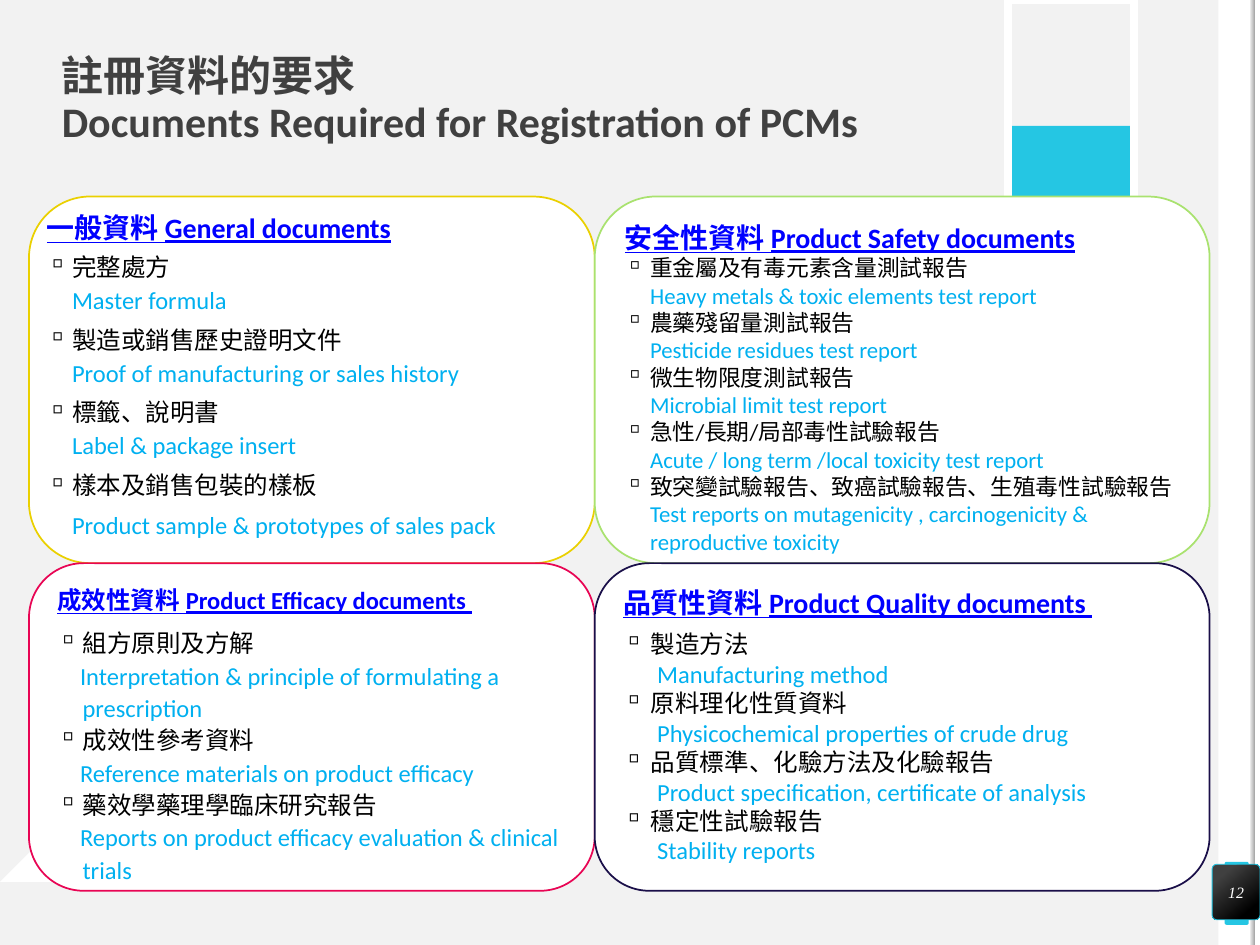
"""Build the slide on documents required for registration of PCMs."""
from itertools import zip_longest
from pptx import Presentation
from pptx.dml.color import RGBColor
from pptx.enum.shapes import MSO_SHAPE as Shape
from pptx.enum.text import MSO_ANCHOR as Anchor, PP_ALIGN as Align
from pptx.oxml.ns import qn
from pptx.util import Inches, Pt

TITLE = ("註冊資料的要求", "Documents Required for Registration of PCMs")
LEFT, TOP = 0.23, 1.56
COLUMNS, ROWS = (4.49, 4.88), (2.91, 2.6)
BLACK, BLUE, SKY, CYAN, WHITE = "000000", "0000FF", "00B0F0", "25C6E3", "FFFFFF"

PANELS = [
    dict(heading=("一般資料 ", "General documents"), line="EAD000", sizes=(16, 14),
         inset=0, spacing=0.9, margin=0.2, bullet=-0.2, indent=0,
         gaps=(6, 3.8, 7.5, 3.8, 7.5, 3.8, 7.5, 7.5),
         items=[("完整處方", "Master formula"),
                ("製造或銷售歷史證明文件", "Proof of manufacturing or sales history"),
                ("標籤、說明書", "Label & package insert"),
                ("樣本及銷售包裝的樣板", "Product sample & prototypes of sales pack")]),
    dict(heading=("安全性資料 ", "Product Safety documents"), line="A9E26F", sizes=(16, 13),
         inset=0.1, spacing=1, margin=0.2, bullet=-0.2, indent=0, gaps=(),
         items=[("重金屬及有毒元素含量測試報告", "Heavy metals & toxic elements test report"),
                ("農藥殘留量測試報告", "Pesticide residues test report"),
                ("微生物限度測試報告", "Microbial limit test report"),
                ("急性/長期/局部毒性試驗報告", "Acute / long term /local toxicity test report"),
                ("致突變試驗報告、致癌試驗報告、生殖毒性試驗報告",
                 "Test reports on mutagenicity , carcinogenicity &\vreproductive toxicity")]),
    dict(heading=("成效性資料 ", "Product Efficacy documents "), line="E80554", sizes=(14, 14),
         inset=0.1, spacing=1.1, margin=0.2, bullet=-0.2, indent=-0.02, gaps=(6,),
         items=[("組方原則及方解", "Interpretation & principle of formulating a prescription"),
                ("成效性參考資料", "Reference materials on product efficacy"),
                ("藥效學藥理學臨床研究報告",
                 "Reports on product efficacy evaluation & clinical trials")]),
    dict(heading=("品質性資料 ", "Product Quality documents "), line="1A0F49", sizes=(16, 14),
         inset=0.1, spacing=1, margin=0.22, bullet=-0.22, indent=0.05, gaps=(6,),
         items=[("製造方法", "Manufacturing method"),
                ("原料理化性質資料", "Physicochemical properties of crude drug"),
                ("品質標準、化驗方法及化驗報告", "Product specification, certificate of analysis"),
                ("穩定性試驗報告", "Stability reports")]),
]
HEXAGONS = [((0.35, 6.05, 0.91, 1.06), WHITE, None), ((7.82, 1.44, 0.91, 1.06), CYAN, None),
            ((7.94, 0.33, 1.51, 1.76), None, WHITE), ((9.03, 0.39, 0.42, 0.49), WHITE, None)]
HEXAGON_CORNERS = [(0.25, 0), (0.75, 0), (1.01, 0.5), (0.75, 1), (0.25, 1), (-0.01, 0.5)]


def color(value):
    return RGBColor.from_string(value)


def paint(shape, fill=None, line=None, width=1):
    shape.shadow.inherit = False
    if fill:
        shape.fill.solid()
        shape.fill.fore_color.rgb = color(fill)
    else:
        shape.fill.background()
    if line:
        shape.line.color.rgb = color(line)
        shape.line.width = Pt(width)
    else:
        shape.line.fill.background()


def shade(shape, stops, angle):
    shape.fill.gradient()
    shape.fill.gradient_angle = angle
    for stop, (position, value) in zip(shape.fill.gradient_stops, stops):
        stop.position, stop.color.rgb = position, color(value)


def add_box(page, kind, area, fill, line=None, width=1, corner=None):
    box = page.shapes.add_shape(kind, *map(Inches, area))
    paint(box, fill, line, width)
    if corner:
        box.adjustments[0] = corner
    return box


def add_hexagon(page, area, fill, line):
    left, top, width, height = area
    points = []
    for index, corner in enumerate(HEXAGON_CORNERS):
        before, after = HEXAGON_CORNERS[index - 1], HEXAGON_CORNERS[(index + 1) % 6]
        start, end = ([c + 0.1 * (n - c) for c, n in zip(corner, near)] for near in (before, after))
        for step in range(7):
            t = step / 6
            x, y = ((1 - t) ** 2 * s + 2 * t * (1 - t) * c + t * t * e
                    for s, c, e in zip(start, corner, end))
            points.append((left + x * width, top + y * height))
    builder = page.shapes.build_freeform(*points[0], scale=Inches(1))
    builder.add_line_segments(points[1:], close=True)
    paint(builder.convert_to_shape(), fill, line, 5)


def style(para, size, value, bold=False, underline=False, face="Calibri"):
    for span in para.runs:
        font = span.font
        font.size, font.name, font.bold, font.underline = Pt(size), face, bold, underline
        font.color.rgb = color(value)


def set_insets(frame, side, vertical):
    frame.margin_left = frame.margin_right = Inches(side)
    frame.margin_top = frame.margin_bottom = Inches(vertical)


def add_panel(page, area, panel):
    box = add_box(page, Shape.ROUNDED_RECTANGLE, area, WHITE, panel["line"])
    frame = box.text_frame
    frame.word_wrap, frame.vertical_anchor = True, Anchor.TOP
    set_insets(frame, panel["inset"], panel["inset"] / 2)
    heading_size, size = panel["sizes"]
    heading = frame.paragraphs[0]
    heading.text = "".join(panel["heading"])
    heading.alignment, heading.line_spacing = Align.LEFT, min(panel["spacing"], 1.0)
    style(heading, heading_size, BLUE, True, True)
    lines = [line for pair in panel["items"] for line in pair]
    for index, (line, gap) in enumerate(zip_longest(lines, panel["gaps"], fillvalue=0)):
        chinese = index % 2 == 0
        para = frame.add_paragraph()
        para.text = line
        para.alignment, para.line_spacing, para.space_before = Align.LEFT, panel["spacing"], Pt(gap)
        style(para, size, BLACK if chinese else SKY)
        properties = para._p.get_or_add_pPr()
        properties.set("marL", str(Inches(panel["margin"])))
        properties.set("indent", str(Inches(panel["bullet" if chinese else "indent"])))
        if chinese:
            mark = properties.makeelement(qn("a:buChar"), {"char": "▫"})
            properties.append(mark)


def add_title(page):
    title = page.shapes.title
    title.left, title.top, title.width, title.height = map(Inches, (0.49, 0.44, 9.29, 0.72))
    frame = title.text_frame
    frame.word_wrap, frame.vertical_anchor = True, Anchor.MIDDLE
    set_insets(frame, 0, 0)
    para = frame.paragraphs[0]
    para.text = "\v".join(TITLE)
    para.alignment, para.line_spacing = Align.LEFT, 0.9
    style(para, 24, "404040", True)
    para.runs[0].font.name = "Noto Sans CJK SC"


def add_page_number(page):
    badge = add_box(page, Shape.ROUNDED_RECTANGLE, (9.62, 6.86, 0.38, 0.44), BLACK, CYAN, 0.5, 0.095)
    shade(badge, [(0.2, "404040"), (0.82, BLACK)], 310)
    frame = badge.text_frame
    frame.vertical_anchor = Anchor.MIDDLE
    set_insets(frame, 0, 0)
    para = frame.paragraphs[0]
    para.text, para.alignment = "12", Align.CENTER
    style(para, 9, WHITE, face="Times New Roman")
    para.runs[0].font.italic = True


def main():
    deck = Presentation()
    deck.slide_width, deck.slide_height = Inches(10), Inches(7.5)
    page = deck.slides.add_slide(deck.slide_layouts[5])
    page.background.fill.solid()
    page.background.fill.fore_color.rgb = color("F2F2F2")
    add_box(page, Shape.RECTANGLE, (9.67, 0, 0.29, 7.5), WHITE)
    add_box(page, Shape.ROUNDED_RECTANGLE, (9.72, 6.84, 0.19, 0.5), CYAN, corner=0.074)
    add_box(page, Shape.RECTANGLE, (9.96, 0, 0.04, 7.5), WHITE)
    edge = add_box(page, Shape.RECTANGLE, (9.92, 0, 0.04, 7.5), WHITE)
    shade(edge, [(0, "F2F2F2"), (1, "A6A6A6")], 0)
    for hexagon in HEXAGONS:
        add_hexagon(page, *hexagon)
    add_title(page)
    for index, panel in enumerate(PANELS):
        row, column = divmod(index, 2)
        area = (LEFT + sum(COLUMNS[:column]), TOP + sum(ROWS[:row]), COLUMNS[column], ROWS[row])
        add_panel(page, area, panel)
    add_page_number(page)
    deck.save("out.pptx")


if __name__ == "__main__":
    main()
